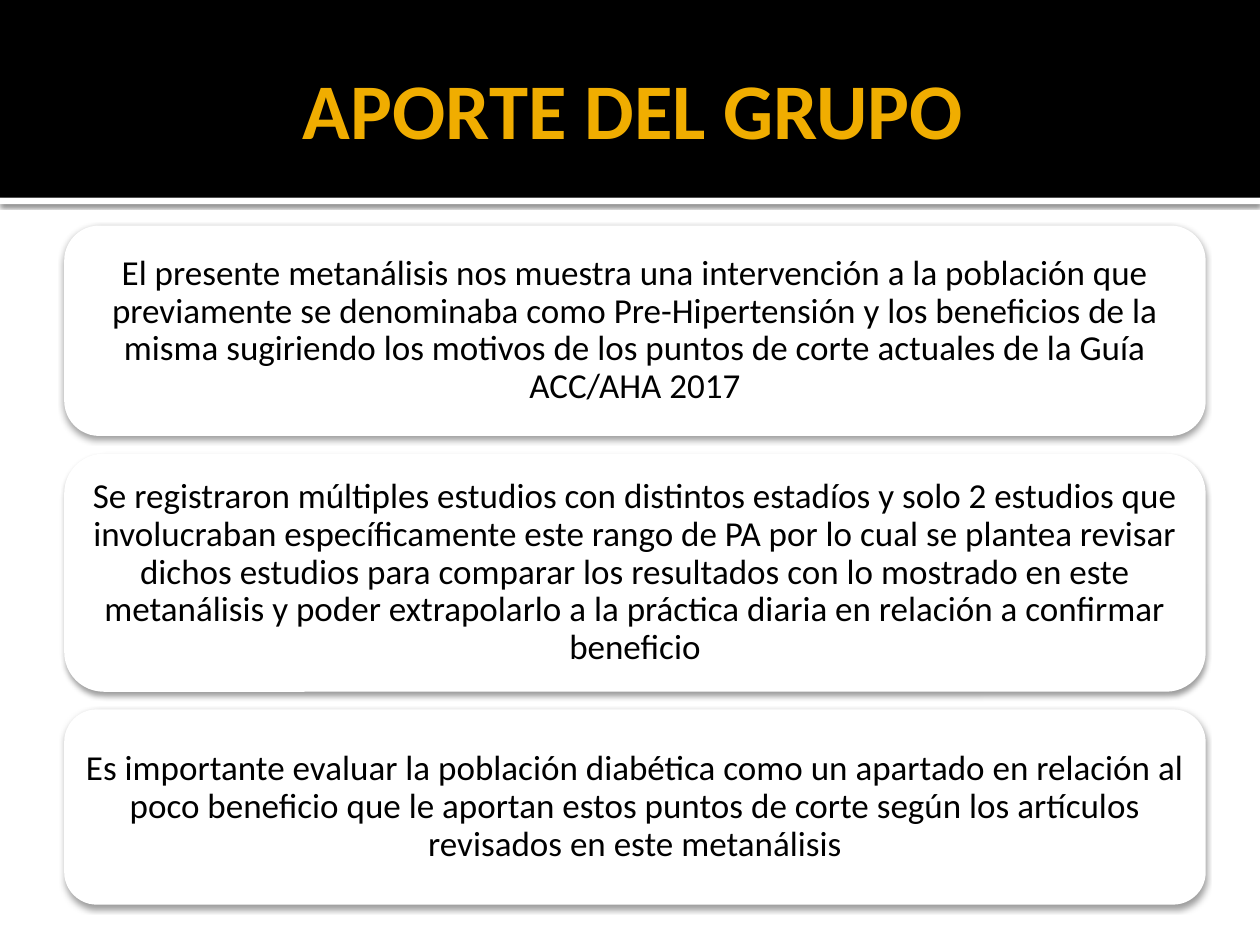
from dataclasses import dataclass

from lxml import etree
from pptx import Presentation
from pptx.dml.color import RGBColor
from pptx.enum.shapes import MSO_SHAPE
from pptx.enum.text import MSO_ANCHOR, PP_ALIGN
from pptx.oxml.ns import qn
from pptx.util import Inches, Pt

RECTANGLE = MSO_SHAPE.RECTANGLE
ROUNDED = MSO_SHAPE.ROUNDED_RECTANGLE
MIDDLE = MSO_ANCHOR.MIDDLE
CENTER = PP_ALIGN.CENTER


@dataclass(frozen=True)
class Theme:
    font: str = "Calibri"
    black: RGBColor = RGBColor(0, 0, 0)
    white: RGBColor = RGBColor(255, 255, 255)
    gold: RGBColor = RGBColor(0xF0, 0xAD, 0x00)
    title_size: int = 45
    body_size: int = 20


THEME = Theme()
CARD_LEFT, CARD_TOP, CARD_WIDTH, CARD_GAP = 0.51, 1.79, 9.06, 0.14
CARDS = [
    (1.67, "El presente metanálisis nos muestra una intervención a la población que "
           "previamente se denominaba como Pre-Hipertensión y los beneficios de la misma "
           "sugiriendo los motivos de los puntos de corte actuales de la Guía ACC/AHA 2017"),
    (1.89, "Se registraron múltiples estudios con distintos estadíos y solo 2 estudios que "
           "involucraban específicamente este rango de PA por lo cual se plantea revisar "
           "dichos estudios para comparar los resultados con lo mostrado en este metanálisis "
           "y poder extrapolarlo a la práctica diaria en relación a confirmar beneficio"),
    (1.55, "Es importante evaluar la población diabética como un apartado en relación al "
           "poco beneficio que le aportan estos puntos de corte según los artículos "
           "revisados en este metanálisis"),
]


def add_panel(page, kind, left, top, width, height, color):
    panel = page.shapes.add_shape(
        kind, Inches(left), Inches(top), Inches(width), Inches(height))
    panel.shadow.inherit = False
    panel.fill.solid()
    panel.fill.fore_color.rgb = color
    panel.line.fill.background()
    return panel


def add_shadow(panel, opacity, blur, distance):
    effects = panel._element.spPr.find(qn("a:effectLst"))
    shadow = etree.SubElement(
        effects, qn("a:outerShdw"), blurRad=str(Pt(blur)), dist=str(Pt(distance)),
        dir="5400000", algn="ctr", rotWithShape="0")
    color = etree.SubElement(shadow, qn("a:srgbClr"), val=str(THEME.black))
    etree.SubElement(color, qn("a:alpha"), val=str(opacity * 1000))


def write_text(box, text, size, color, margins, bold=False):
    frame = box.text_frame
    frame.word_wrap = True
    frame.vertical_anchor = MIDDLE
    (frame.margin_left, frame.margin_top,
     frame.margin_right, frame.margin_bottom) = [Inches(margin) for margin in margins]
    para = frame.paragraphs[0]
    para.alignment = CENTER
    span = para.add_run()
    span.text = text
    span.font.name = THEME.font
    span.font.size = Pt(size)
    span.font.bold = bold
    span.font.color.rgb = color
    return para


def add_header(page):
    stripe = add_panel(page, RECTANGLE, 0, 1.57, 10, 0.05, THEME.white)
    add_shadow(stripe, opacity=60, blur=2.5, distance=0.8)
    add_panel(page, RECTANGLE, 0, 0, 10, 1.57, THEME.black)
    title = page.shapes.add_textbox(Inches(0.5), Inches(0.17), Inches(9), Inches(1.37))
    write_text(title, "APORTE DEL GRUPO", THEME.title_size, THEME.gold,
               (0.1, 0.05, 0.05, 0.05), bold=True)


def add_card(page, top, height, text):
    card = add_panel(page, ROUNDED, CARD_LEFT, top, CARD_WIDTH, height, THEME.white)
    add_shadow(card, opacity=38, blur=3.5, distance=2)
    para = write_text(card, text, THEME.body_size, THEME.black, (0, 0, 0, 0))
    para.line_spacing = 0.9
    para.space_after = Pt(THEME.body_size * 0.35)


def main():
    deck = Presentation()
    deck.slide_width, deck.slide_height = Inches(10), Inches(7.5)
    page = deck.slides.add_slide(deck.slide_layouts[6])
    add_header(page)
    top = CARD_TOP
    for height, text in CARDS:
        add_card(page, top, height, text)
        top += height + CARD_GAP
    deck.save("out.pptx")


if __name__ == "__main__":
    main()
